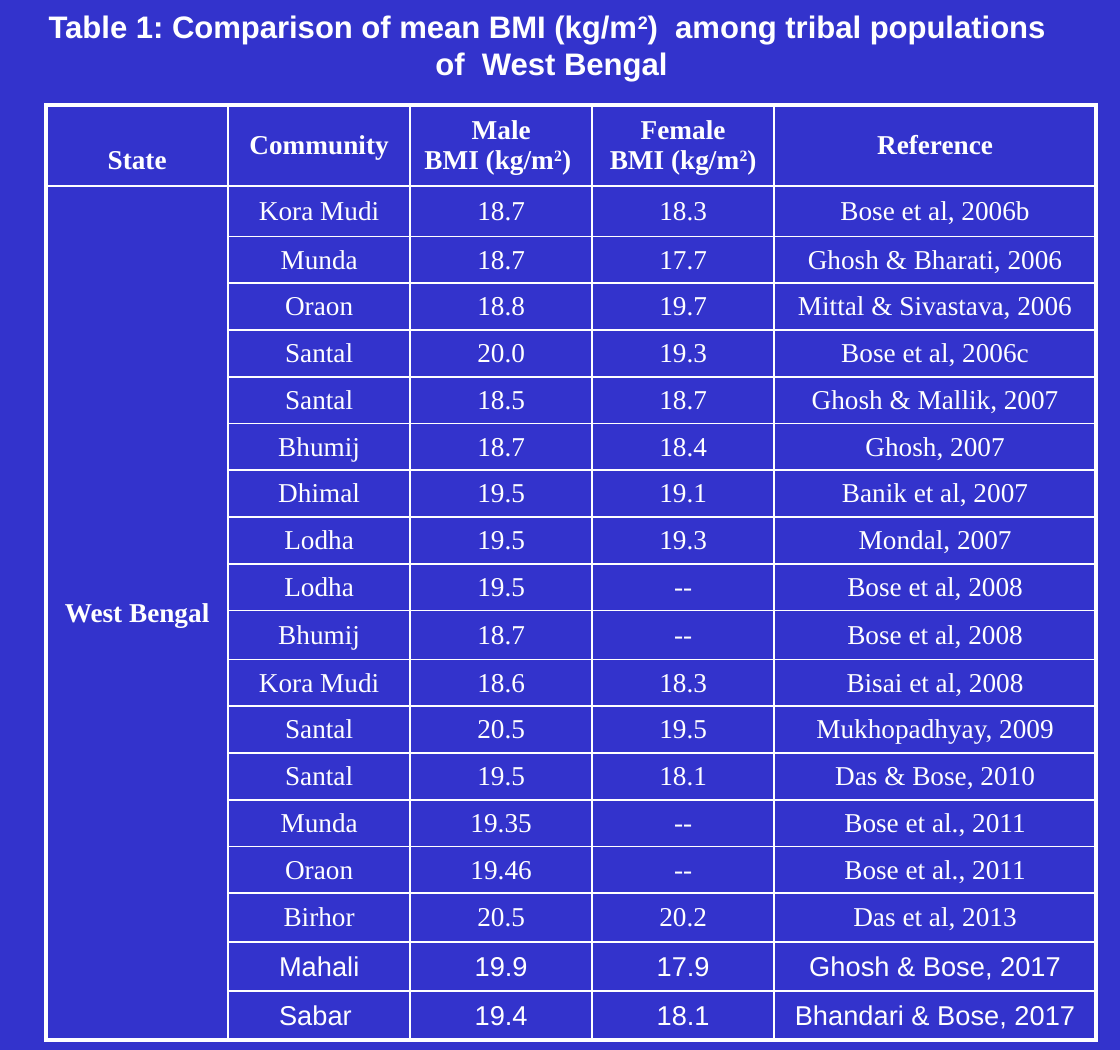
from lxml import etree
from pptx import Presentation
from pptx import util as u
from pptx.dml.color import RGBColor
from pptx.enum import text
from pptx.oxml.ns import qn

HEADER = ["State", "Community", "Male\nBMI (kg/m^2) ", "Female\nBMI (kg/m^2)", "Reference"]
ROWS = [
    ("Kora Mudi", "18.7", "18.3", "Bose et al, 2006b"),
    ("Munda", "18.7", "17.7", "Ghosh & Bharati, 2006"),
    ("Oraon", "18.8", "19.7", "Mittal & Sivastava, 2006"),
    ("Santal", "20.0", "19.3", "Bose et al, 2006c"),
    ("Santal", "18.5", "18.7", "Ghosh & Mallik, 2007"),
    ("Bhumij", "18.7", "18.4", "Ghosh, 2007"),
    ("Dhimal", "19.5", "19.1", "Banik et al, 2007"),
    ("Lodha", "19.5", "19.3", "Mondal, 2007"),
    ("Lodha", "19.5", "--", "Bose et al, 2008"),
    ("Bhumij", "18.7", "--", "Bose et al, 2008"),
    ("Kora Mudi", "18.6", "18.3", "Bisai et al, 2008"),
    ("Santal", "20.5", "19.5", "Mukhopadhyay, 2009"),
    ("Santal", "19.5", "18.1", "Das & Bose, 2010"),
    ("Munda", "19.35", "--", "Bose et al., 2011"),
    ("Oraon", "19.46", "--", "Bose et al., 2011"),
    ("Birhor", "20.5", "20.2", "Das et al, 2013"),
    ("Mahali", "19.9", "17.9", "Ghosh & Bose, 2017"),
    ("Sabar ", "19.4", "18.1", "Bhandari & Bose, 2017"),
]
COLS = [13, 13, 13, 13, 23]
# Heights that differ from the common row height, by row number
TALL = {0: 5.8, 1: 3.6, 10: 3.5, 16: 3.5, 17: 3.5, 18: 3.5}


def rgb(value):
    return RGBColor.from_string(value)


def grid(n):
    """Length of n grid steps; the slide is 80 columns by 75 rows."""
    return u.Inches(n / 10)


class Deck:
    ink, ground = "FFFFFF", "3333CC"
    sans, serif = "Arial", "Times New Roman"
    thin, thick = 1, 2.25

    def __init__(self, cols, rows):
        self.prs = Presentation()
        self.prs.slide_width, self.prs.slide_height = grid(cols), grid(rows)

    def slide(self):
        self.s = self.prs.slides.add_slide(self.prs.slide_layouts[5])
        fill = self.s.background.fill
        fill.solid()
        fill.fore_color.rgb = rgb(self.ground)

    def lines(self, tf, content, size, font, bold):
        """Centred lines; the character after ^ is raised."""
        for i, line in enumerate(content.split("\n")):
            p = tf.paragraphs[0] if i == 0 else tf.add_paragraph()
            p.alignment = text.PP_ALIGN.CENTER
            for j, part in enumerate(line.split("^")):
                pieces = [(part, False)] if j == 0 else [(part[0], True), (part[1:], False)]
                for piece, raised in pieces:
                    r = p.add_run()
                    r.text = piece
                    r.font.size, r.font.name, r.font.bold = u.Pt(size), font, bold
                    r.font.color.rgb = rgb(self.ink)
                    if raised:
                        r._r.get_or_add_rPr().set("baseline", "30000")

    def title(self, content, x, y, w, h):
        sp = self.s.shapes.title
        sp.left, sp.top, sp.width, sp.height = map(grid, (x, y, w, h))
        tf = sp.text_frame
        tf.word_wrap = True
        tf.auto_size = text.MSO_AUTO_SIZE.SHAPE_TO_FIT_TEXT
        tf.vertical_anchor = text.MSO_ANCHOR.MIDDLE
        self.lines(tf, content, 16, self.sans, True)

    def border(self, cell, **widths):
        tc_pr = cell._tc.get_or_add_tcPr()
        for side in "LRTB":
            if side in widths:
                ln = etree.SubElement(tc_pr, qn("a:ln" + side), w=str(u.Pt(widths[side])))
                color = etree.SubElement(etree.SubElement(ln, qn("a:solidFill")), qn("a:srgbClr"))
                color.set("val", self.ink)

    def table(self, header, label, rows, cols, heights, x, y):
        n, m = len(heights), len(cols)
        frame = self.s.shapes.add_table(n, m, *map(grid, (x, y, sum(cols), sum(heights))))
        tbl = frame.table
        tbl.first_row = tbl.horz_banding = False
        for column, width in zip(tbl.columns, cols):
            column.width = grid(width)
        for row, height in zip(tbl.rows, heights):
            row.height = grid(height)

        # The label spans every body row of the first column
        tbl.cell(1, 0).merge(tbl.cell(n - 1, 0))
        body = [(label if i == 0 else "", *row) for i, row in enumerate(rows)]
        for i, row in enumerate([header, *body]):
            for j, content in enumerate(row):
                cell = tbl.cell(i, j)
                edges = {"L": self.thick if j == 0 else self.thin,
                         "R": self.thick if j == m - 1 else self.thin}
                if not cell.is_spanned:
                    edges["T"] = self.thick if i == 0 else self.thin
                if not cell.is_spanned or i == n - 1:
                    last = i == n - 1 or cell.is_merge_origin
                    edges["B"] = self.thick if last else self.thin
                self.border(cell, **edges)
                cell.fill.background()
                cell.vertical_anchor = text.MSO_ANCHOR.MIDDLE
                if content:
                    # The last two rows are set in the sans face
                    font = self.sans if i >= n - 2 else self.serif
                    self.lines(cell.text_frame, content, 14, font, i == 0 or j == 0)
        return tbl


def main():
    deck = Deck(80, 75)
    deck.slide()

    # Title
    deck.title("Table 1: Comparison of mean BMI (kg/m^2)  among tribal populations \n"
               "of  West Bengal", 1.9, 0, 75, 6.4)

    # Table: plain rows share the height the tall ones leave
    n = len(ROWS) + 1
    plain = (66.7 - sum(TALL.values())) / (n - len(TALL))
    heights = [TALL.get(i, plain) for i in range(n)]
    tbl = deck.table(HEADER, "West Bengal", ROWS, COLS, heights, 3.3, 7.5)

    # "State" sits lower than the other headings
    tbl.cell(0, 0).margin_top = grid(2.65)

    deck.prs.save("out.pptx")


if __name__ == "__main__":
    main()
